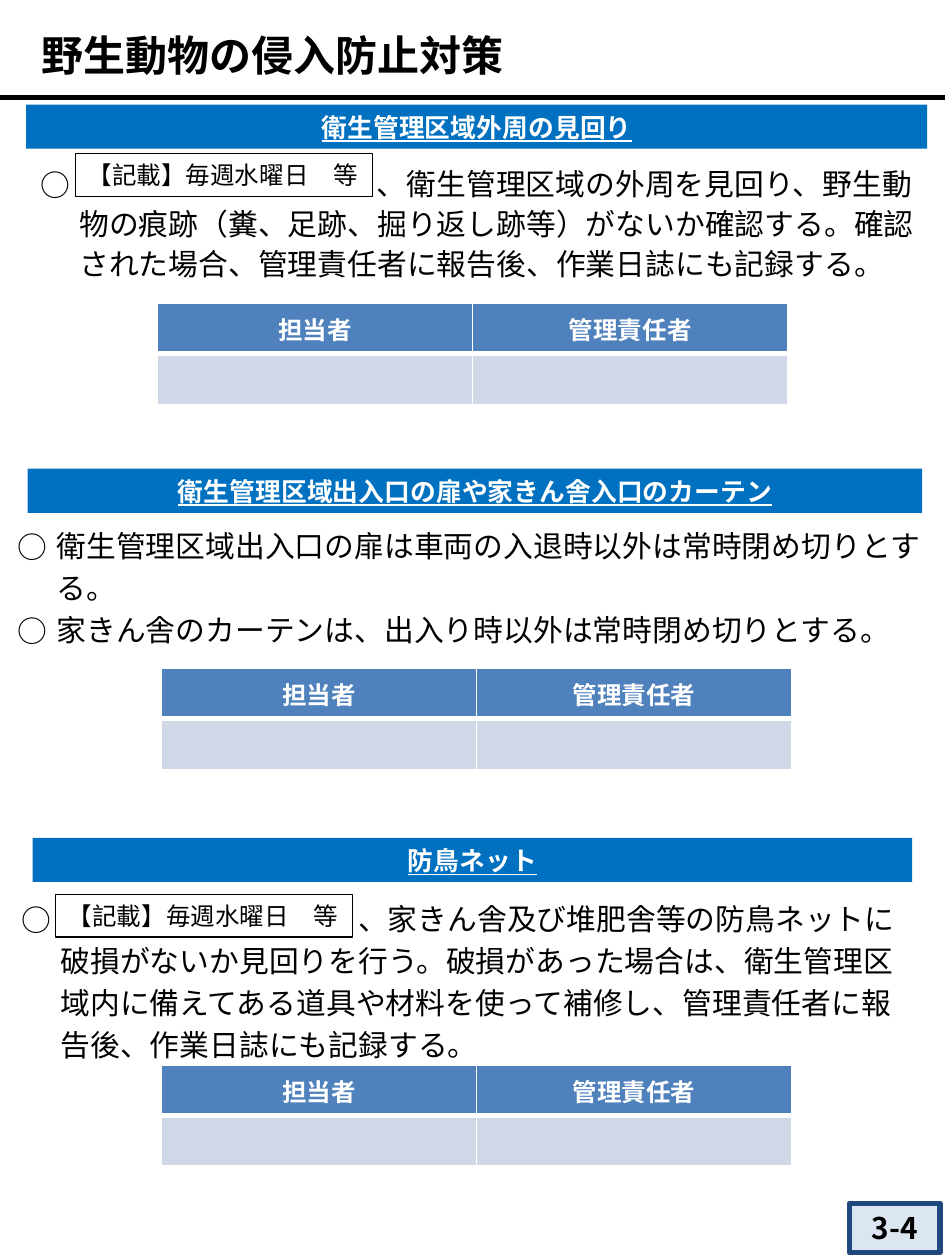
import pptx
import pptx.dml.color
import pptx.enum.shapes
import pptx.enum.text
import pptx.oxml
import pptx.oxml.ns
import pptx.util
from pptx.util import Cm

FONT = "Noto Sans CJK JP"
ALIGN = pptx.enum.text.PP_ALIGN
MIDDLE = pptx.enum.text.MSO_ANCHOR.MIDDLE
BLANK_LABEL = "【記載】毎週水曜日　等"
BLANK_GAP = 153


def color(value):
    return pptx.dml.color.RGBColor.from_string(value)


def add_xml(parent, xml):
    namespace = pptx.oxml.ns.nsdecls("a")
    element = pptx.oxml.parse_xml(xml.replace("/>", f" {namespace}/>", 1)
                                  if xml.endswith("/>") and xml.count("<") == 1
                                  else xml.replace(">", f" {namespace}>", 1))
    parent.append(element)


def style_font(font, size, ink="000000", bold=False, underline=False):
    font.size = pptx.util.Pt(size)
    font.bold = bold
    font.underline = underline
    font.color.rgb = color(ink)
    font.name = FONT


def style_run(run, *style):
    style_font(run.font, *style)
    add_xml(run.font._element, f'<a:ea typeface="{FONT}"/>')


def write(frame, text, align, *style):
    frame.word_wrap = True
    frame.vertical_anchor = MIDDLE
    paragraph = frame.paragraphs[0]
    paragraph.text = text
    paragraph.alignment = align
    style_run(paragraph.runs[0], *style)


def add_box(slide, box, fill=None, line=None, line_width=0.75):
    shape = slide.shapes.add_shape(
        pptx.enum.shapes.MSO_SHAPE.RECTANGLE, *map(Cm, box))
    shape.shadow.inherit = False
    if fill:
        shape.fill.solid()
        shape.fill.fore_color.rgb = color(fill)
    else:
        shape.fill.background()
    if line:
        shape.line.color.rgb = color(line)
        shape.line.width = pptx.util.Pt(line_width)
    else:
        shape.line.fill.background()
    return shape.text_frame


def add_title(slide, box):
    left, top, width, height = box
    title = slide.shapes.add_textbox(*map(Cm, box)).text_frame
    title.margin_left = title.margin_right = Cm(0.3)
    title.margin_top = title.margin_bottom = Cm(0.15)
    write(title, "野生動物の侵入防止対策", ALIGN.LEFT, 24, "000000", True)
    rule_top = Cm(top + height + 0.18)
    rule = slide.shapes.add_connector(
        pptx.enum.shapes.MSO_CONNECTOR.STRAIGHT, 0, rule_top, Cm(19.05), rule_top)
    rule.line.color.rgb = color("000000")
    rule.line.width = pptx.util.Pt(3)
    add_xml(rule._element.spPr, "<a:effectLst/>")


def add_rules(slide, box, rules, spacing, has_blank):
    frame = slide.shapes.add_textbox(*map(Cm, box)).text_frame
    frame.word_wrap = True
    for index, rule in enumerate(rules):
        paragraph = frame.paragraphs[0] if index == 0 else frame.add_paragraph()
        properties = paragraph._p.get_or_add_pPr()
        properties.set("marL", str(Cm(0.79)))
        properties.set("indent", str(-Cm(0.79)))
        paragraph.line_spacing = pptx.util.Pt(spacing)
        add_xml(properties, f'<a:buFont typeface="{FONT}"/>')
        add_xml(properties, '<a:buChar char="○"/>')
        if has_blank:
            gap = paragraph.add_run()
            gap.text = "　"
            style_run(gap, 17)
            gap.font._element.set("spc", str(BLANK_GAP * 100))
        sentence = paragraph.add_run()
        sentence.text = rule
        style_run(sentence, 17)


def style_cell(cell, fill, top_width, bottom_width):
    properties = cell._tc.get_or_add_tcPr()
    for side, width in zip("LRTB", (1, 1, top_width, bottom_width)):
        add_xml(properties, f'<a:ln{side} w="{pptx.util.Pt(width)}"><a:solidFill>'
                            f'<a:srgbClr val="FFFFFF"/></a:solidFill></a:ln{side}>')
    cell.fill.solid()
    cell.fill.fore_color.rgb = color(fill)
    cell.vertical_anchor = MIDDLE


def add_staff_table(slide, left, top):
    table = slide.shapes.add_table(
        2, 2, Cm(left), Cm(top), Cm(12.7), Cm(2.04)).table
    for column, role in enumerate(("担当者", "管理責任者")):
        header, entry = table.cell(0, column), table.cell(1, column)
        style_cell(header, "4F81BD", 1, 3)
        style_cell(entry, "D0D8E8", 3, 1)
        write(header.text_frame, role, ALIGN.CENTER, 14, "FFFFFF", True)
        style_font(entry.text_frame.paragraphs[0].font, 14)


def add_section(slide, box, heading, rules, rules_box, spacing, table_at, blank_at=None):
    left, top, width = box
    banner = add_box(slide, (left, top, width, 0.89), "0070C0")
    write(banner, heading, ALIGN.CENTER, 14.7, "FFFFFF", True, True)
    dx, dy, rules_width, rules_height = rules_box
    add_rules(slide, (left + dx, top + dy, rules_width, rules_height),
              rules, spacing, blank_at is not None)
    add_staff_table(slide, left + table_at[0], top + table_at[1])
    if blank_at:
        blank = add_box(slide, (left + blank_at[0], top + blank_at[1], 5.99, 0.86),
                        line="000000")
        write(blank, BLANK_LABEL, ALIGN.LEFT, 14)


def add_page_number(slide, box):
    number = add_box(slide, box, "DCE6F2", "1F497D", 3)
    write(number, "3-4", ALIGN.CENTER, 17, "000000", True)


def main():
    deck = pptx.Presentation()
    deck.slide_width, deck.slide_height = Cm(19.05), Cm(25.4)
    slide = deck.slides.add_slide(deck.slide_layouts[6])
    add_title(slide, (0.53, 0.43, 16.59, 1.35))
    add_section(
        slide, (0.53, 2.11, 18.16), "衛生管理区域外周の見回り",
        ["、衛生管理区域の外周を見回り、野生動物の痕跡（糞、足跡、掘り返し跡等）がないか確認する。"
         "確認された場合、管理責任者に報告後、作業日誌にも記録する。"],
        (0.03, 1.01, 18.31, 2.62), 23, (2.65, 4), (0.99, 0.99))
    add_section(
        slide, (0.56, 9.45, 18.03), "衛生管理区域出入口の扉や家きん舎入口のカーテン",
        ["衛生管理区域出入口の扉は車両の入退時以外は常時閉め切りとする。",
         "家きん舎のカーテンは、出入り時以外は常時閉め切りとする。"],
        (-0.46, 0.94, 18.85, 2.72), 24, (2.7, 4.02))
    add_section(
        slide, (0.66, 16.89, 17.73), "防鳥ネット",
        ["、家きん舎及び堆肥舎等の防鳥ネットに破損がないか見回りを行う。"
         "破損があった場合は、衛生管理区域内に備えてある道具や材料を使って補修し、"
         "管理責任者に報告後、作業日誌にも記録する。"],
        (-0.48, 1.02, 18.39, 3.56), 24, (2.6, 4.58), (0.46, 1.14))
    add_page_number(slide, (17.12, 24.26, 1.83, 0.99))
    deck.save("out.pptx")


if __name__ == "__main__":
    main()
